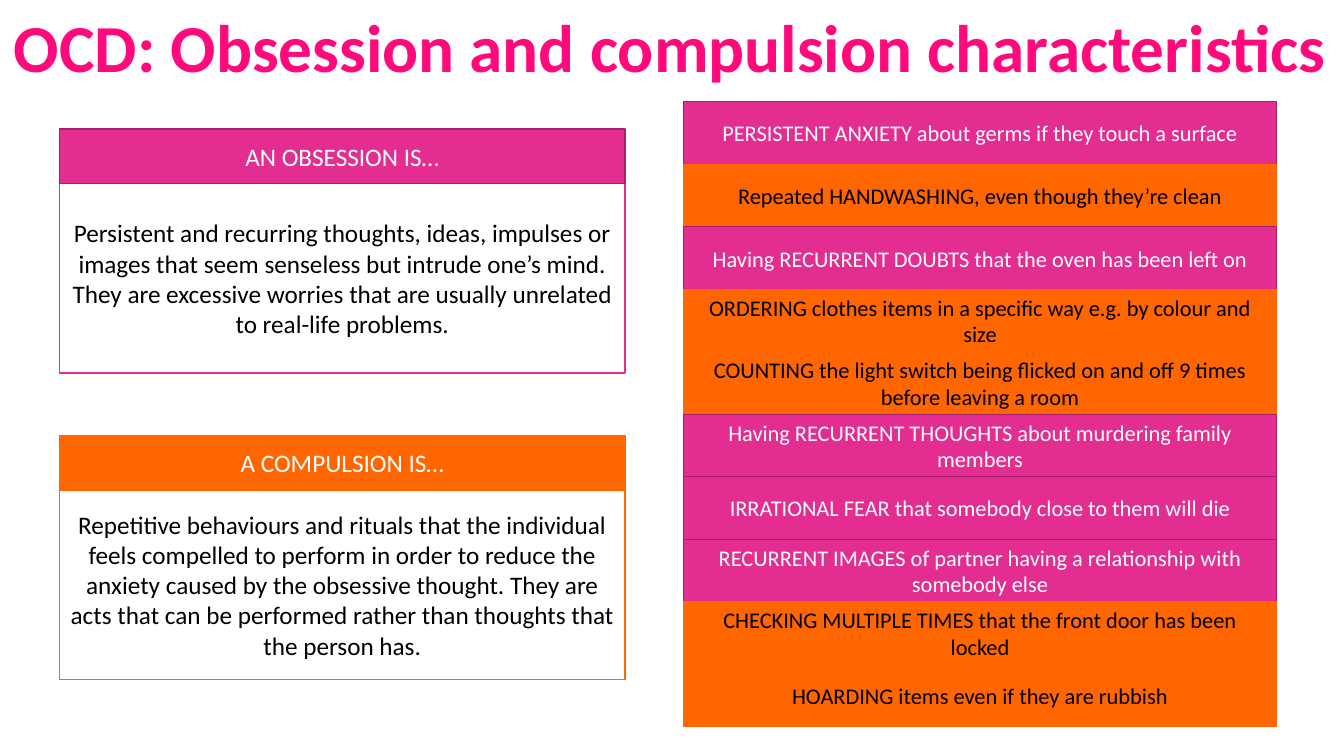
from dataclasses import dataclass

import pptx
import pptx.dml.color
import pptx.enum.shapes
import pptx.enum.text
import pptx.util


@dataclass(frozen=True)
class Theme:
    font: str = "Calibri"
    title_size: int = 48
    definition_size: int = 18
    example_size: int = 16
    title: str = "FF097C"
    pink: str = "E32D91"
    dark_pink: str = "A8216B"
    orange: str = "FF6600"
    white: str = "FFFFFF"
    black: str = "000000"


THEME = Theme()
SLIDE_WIDTH, SLIDE_HEIGHT = 13.33, 7.5
TITLE_BOX = (0, 0, 13.3, 0.91)
DEFINITIONS_BOX = (0.59, 1.28, 5.61, 5.46)
EXAMPLES_BOX = (6.78, 1.01, 5.88, 6.2)
HEADING_HEIGHT, DEFINITION_HEIGHT = 0.54, 1.88

# Fill, outline and example text colour of each symptom
OBSESSION = (THEME.pink, THEME.dark_pink, THEME.white)
COMPULSION = (THEME.orange, THEME.orange, THEME.black)

DEFINITIONS = [
    (OBSESSION, "AN OBSESSION IS…",
     "Persistent and recurring thoughts, ideas, impulses or images that seem "
     "senseless but intrude one’s mind. They are excessive worries that are "
     "usually unrelated to real-life problems."),
    (COMPULSION, "A COMPULSION IS…",
     "Repetitive behaviours and rituals that the individual feels compelled to "
     "perform in order to reduce the anxiety caused by the obsessive thought. "
     "They are acts that can be performed rather than thoughts that the person has."),
]

EXAMPLES = [
    (OBSESSION, "PERSISTENT ANXIETY about germs if they touch a surface"),
    (COMPULSION, "Repeated HANDWASHING, even though they’re clean"),
    (OBSESSION, "Having RECURRENT DOUBTS that the oven has been left on"),
    (COMPULSION, "ORDERING clothes items in a specific way e.g. by colour and size"),
    (COMPULSION, "COUNTING the light switch being flicked on and off 9 times "
                 "before leaving a room"),
    (OBSESSION, "Having RECURRENT THOUGHTS about murdering family members"),
    (OBSESSION, "IRRATIONAL FEAR that somebody close to them will die"),
    (OBSESSION, "RECURRENT IMAGES of partner having a relationship with somebody else"),
    (COMPULSION, "CHECKING MULTIPLE TIMES that the front door has been locked"),
    (COMPULSION, "HOARDING items even if they are rubbish"),
]


def rgb(value):
    return pptx.dml.color.RGBColor.from_string(value)


def inches(box):
    return [pptx.util.Inches(length) for length in box]


def write_text(frame, text, color, size, bold=False):
    paragraph = frame.paragraphs[0]
    paragraph.alignment = pptx.enum.text.PP_ALIGN.CENTER
    run = paragraph.add_run()
    run.text = text
    font_format = {"name": THEME.font, "size": pptx.util.Pt(size), "bold": bold}
    for attribute, value in font_format.items():
        setattr(run.font, attribute, value)
    run.font.color.rgb = rgb(color)


def add_panel(slide, box, text, fill, outline, color, size):
    panel = slide.shapes.add_shape(
        pptx.enum.shapes.MSO_SHAPE.RECTANGLE, *inches(box))
    panel.shadow.inherit = False
    panel.fill.solid()
    panel.fill.fore_color.rgb = rgb(fill)
    panel.line.color.rgb = rgb(outline)
    panel.line.width = pptx.util.Pt(1)
    frame_format = {"word_wrap": True,
                    "vertical_anchor": pptx.enum.text.MSO_ANCHOR.MIDDLE}
    for attribute, value in frame_format.items():
        setattr(panel.text_frame, attribute, value)
    write_text(panel.text_frame, text, color, size)


def add_title(slide, box):
    title = slide.shapes.add_textbox(*inches(box))
    title.text_frame.word_wrap = False
    title.text_frame.auto_size = pptx.enum.text.MSO_AUTO_SIZE.SHAPE_TO_FIT_TEXT
    write_text(title.text_frame, "OCD: Obsession and compulsion characteristics",
               THEME.title, THEME.title_size, bold=True)


def add_definitions(slide, box):
    """Spread the headed definitions from the top to the bottom of the box."""
    left, top, width, height = box
    card_height = HEADING_HEIGHT + DEFINITION_HEIGHT
    step = (height - card_height) / (len(DEFINITIONS) - 1)
    for index, (symptom, heading, definition) in enumerate(DEFINITIONS):
        fill, outline, _ = symptom
        card_top = top + index * step
        add_panel(slide, (left, card_top + HEADING_HEIGHT, width, DEFINITION_HEIGHT),
                  definition, THEME.white, fill, THEME.black, THEME.definition_size)
        add_panel(slide, (left, card_top, width, HEADING_HEIGHT),
                  heading, fill, outline, THEME.white, THEME.definition_size)


def add_examples(slide, box):
    """Stack the examples in equal rows that fill the box."""
    left, top, width, height = box
    row_height = height / len(EXAMPLES)
    for row, (symptom, example) in enumerate(EXAMPLES):
        add_panel(slide, (left, top + row * row_height, width, row_height),
                  example, *symptom, THEME.example_size)


def main():
    presentation = pptx.Presentation()
    presentation.slide_width = pptx.util.Inches(SLIDE_WIDTH)
    presentation.slide_height = pptx.util.Inches(SLIDE_HEIGHT)
    slide = presentation.slides.add_slide(presentation.slide_layouts[6])
    add_examples(slide, EXAMPLES_BOX)
    add_definitions(slide, DEFINITIONS_BOX)
    add_title(slide, TITLE_BOX)
    presentation.save("out.pptx")


if __name__ == "__main__":
    main()
